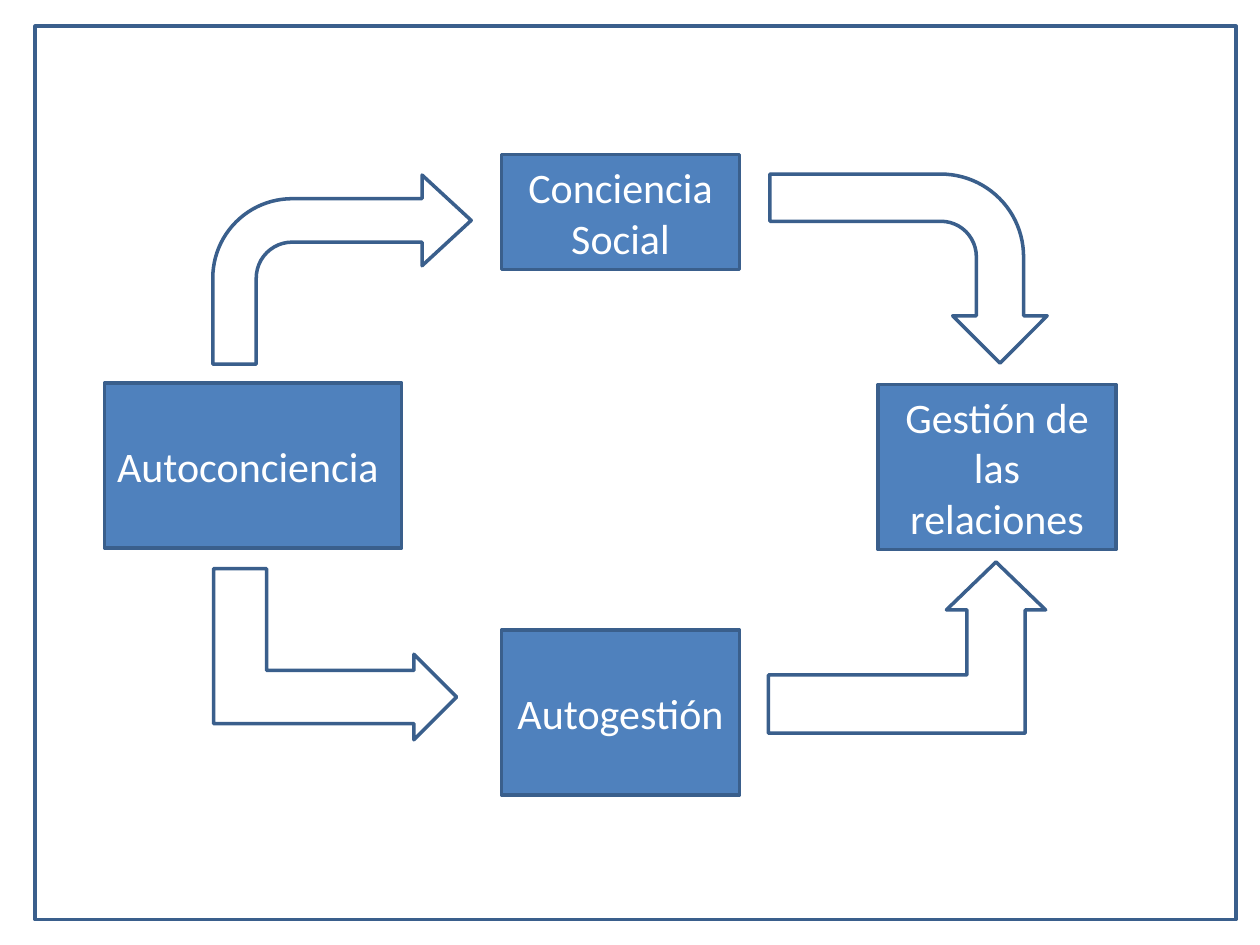
from dataclasses import dataclass

from pptx import Presentation
from pptx import util as u
from pptx.dml.color import RGBColor
from pptx.enum import shapes, text

KIND = shapes.MSO_SHAPE
ALIGN = text.PP_ALIGN


@dataclass(frozen=True)
class Theme:
    white: str = "FFFFFF"
    blue: str = "4F81BD"
    edge: str = "3A5F8C"
    font: str = "Calibri"
    size: int = 24
    line: int = 2


@dataclass(frozen=True)
class Area:
    """Place and size in centimetres."""
    left: float
    top: float
    width: float
    height: float


@dataclass(frozen=True)
class Box:
    label: str
    area: Area
    align: ALIGN = ALIGN.CENTER


@dataclass(frozen=True)
class Arrow:
    kind: KIND
    area: Area
    turn: int = 0
    bends: tuple[float, ...] = ()


THEME = Theme()
FRAME = Area(0.71, 0.53, 24.21, 18.01)

# The four skills
BOX_W, BOX_H, MID_X = 4.8, 3.33, 10.11
BOXES = [
    Box("Autoconciencia", Area(2.11, 7.72, 5.99, BOX_H), ALIGN.LEFT),
    Box("Conciencia Social", Area(MID_X, 3.12, BOX_W, 2.31)),
    Box("Autogestión", Area(MID_X, 12.7, BOX_W, BOX_H)),
    Box("Gestión de las relaciones", Area(17.7, 7.75, BOX_W, BOX_H)),
]

# Block arrows leading from one skill to the next
ARROWS = [
    Arrow(KIND.BENT_ARROW, Area(4.29, 3.53, 5.21, 3.81),
          bends=(0.23, 0.24, 0.26, 0.42)),
    Arrow(KIND.BENT_ARROW, Area(16.41, 2.62, 3.81, 5.59), turn=90),
    Arrow(KIND.BENT_UP_ARROW, Area(5.03, 10.74, 3.45, 4.9), turn=90,
          bends=(0.31, 0.25, 0.25)),
    Arrow(KIND.BENT_UP_ARROW, Area(15.49, 11.33, 5.59, 3.45),
          bends=(0.34, 0.29, 0.28)),
]


def add_shape(slide, kind: KIND, area: Area, fill: str):
    shape = slide.shapes.add_shape(
        kind, u.Cm(area.left), u.Cm(area.top),
        u.Cm(area.width), u.Cm(area.height))
    shape.shadow.inherit = False
    shape.fill.solid()
    shape.fill.fore_color.rgb = RGBColor.from_string(fill)
    shape.line.color.rgb = RGBColor.from_string(THEME.edge)
    shape.line.width = u.Pt(THEME.line)
    return shape


def write(shape, words: str, *, align: ALIGN = ALIGN.CENTER,
          size: int = THEME.size, color: str = THEME.white) -> None:
    frame = shape.text_frame
    frame.word_wrap = True
    frame.vertical_anchor = text.MSO_ANCHOR.MIDDLE
    para = frame.paragraphs[0]
    para.alignment = align
    run = para.add_run()
    run.text = words
    run.font.name = THEME.font
    run.font.size = u.Pt(size)
    run.font.color.rgb = RGBColor.from_string(color)


def draw_box(slide, box: Box) -> None:
    shape = add_shape(slide, KIND.RECTANGLE, box.area, THEME.blue)
    write(shape, box.label, align=box.align)


def draw_arrow(slide, arrow: Arrow) -> None:
    shape = add_shape(slide, arrow.kind, arrow.area, THEME.white)
    shape.rotation = arrow.turn
    for i, bend in enumerate(arrow.bends):
        shape.adjustments[i] = bend


def main() -> None:
    deck = Presentation()
    deck.slide_width, deck.slide_height = u.Cm(25.4), u.Cm(19.05)
    slide = deck.slides.add_slide(deck.slide_layouts[6])

    # Frame, then skills, then arrows
    add_shape(slide, KIND.RECTANGLE, FRAME, THEME.white)
    for box in BOXES:
        draw_box(slide, box)
    for arrow in ARROWS:
        draw_arrow(slide, arrow)

    deck.save("out.pptx")


if __name__ == "__main__":
    main()
